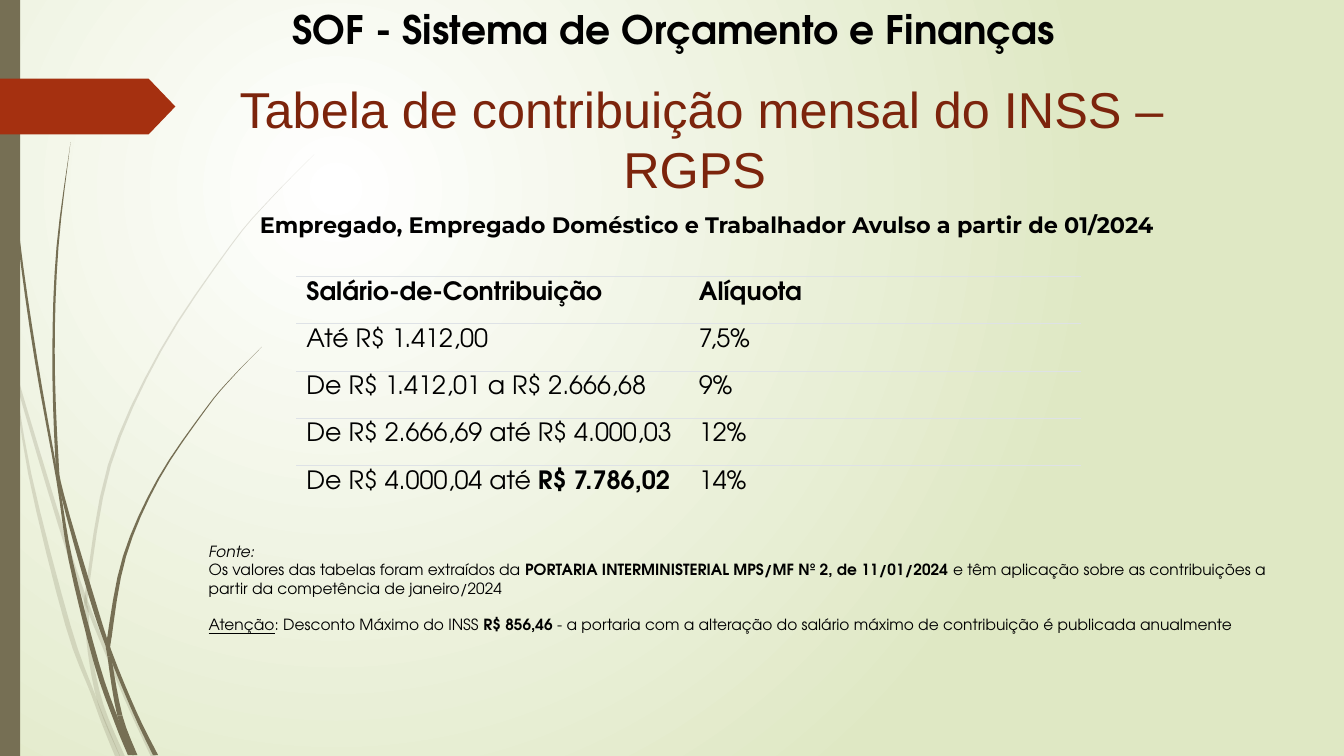
from lxml import etree
from pptx import Presentation
from pptx.dml.color import RGBColor
from pptx.enum.shapes import MSO_SHAPE
from pptx.enum.text import MSO_ANCHOR, MSO_AUTO_SIZE, PP_ALIGN
from pptx.oxml.ns import qn
from pptx.util import Cm, Pt

RECTANGLE, PENTAGON = MSO_SHAPE.RECTANGLE, MSO_SHAPE.PENTAGON
TOP, MIDDLE = MSO_ANCHOR.TOP, MSO_ANCHOR.MIDDLE
LEFT, CENTER = PP_ALIGN.LEFT, PP_ALIGN.CENTER
NO_AUTOFIT = MSO_AUTO_SIZE.NONE

BODY_FONT = "TeX Gyre Adventor"
BLACK, OLIVE, RUST, BROWN = "000000", "766F54", "A53010", "7C240C"
WHITE, PALE_GREEN, GRID_GREY = "FFFFFF", "DFE8C4", "DEE2E6"
NO_STYLE = "{2D5ABB26-0587-4C30-8999-92F81FD0307C}"
CURVE_STEPS = 4

# Each stalk: centre line of (x, y, thickness) in centimetres, and the joints
# (point numbers) at which one piece of grass ends and the next begins
LIGHT_STALKS = [
    ([(0, 7.39, 0.1), (0.25, 8.74, 0.06), (0.39, 9.45, 0.08), (1.52, 13.23, 0.11),
      (2.18, 15.19, 0.1), (3.18, 17.6, 0.1), (3.86, 19.05, 0.13)], (1, 4)),
    ([(0.28, 8.89, 0), (0.75, 11.94, 0.08), (1.71, 15.75, 0.13), (2.34, 17.48, 0.1),
      (2.65, 18.3, 0.12), (2.96, 19.05, 0.13)], (4,)),
    ([(7.92, 3.89, 0), (6.81, 5.02, 0.02), (5.8, 6.21, 0.03), (4.04, 8.85, 0.05),
      (2.76, 11.72, 0.08), (2.2, 14.83, 0.08), (2.19, 15.4, 0.09), (2.26, 16.41, 0.1),
      (2.54, 17.75, 0.13), (3.08, 19.05, 0.13)], (5, 6, 8)),
]
DARK_STALKS = [
    ([(0.09, 0, 0.03), (0.18, 2.79, 0.03), (0.46, 5.92, 0.05), (0.9, 9.02, 0.07),
      (1.45, 12.1, 0.06), (1.78, 14.12, 0.1), (2.43, 16.71, 0.13),
      (2.95, 18.2, 0.13), (3.3, 19.03, 0.15)], (4, 7)),
    ([(1.78, 3.58, 0), (1.45, 6.22, 0.05), (1.35, 8.86, 0.06), (1.43, 11.46, 0.08),
      (1.57, 12.45, 0.08), (2.3, 15.01, 0.13), (2.77, 16.43, 0.1),
      (3.4, 17.96, 0.1), (3.92, 19.03, 0.13)], (3, 4, 6)),
    ([(6.6, 8.74, 0), (5.87, 9.49, 0.02), (5.19, 10.3, 0.03), (3.99, 12.07, 0.05),
      (3.14, 14.01, 0.08), (2.76, 16.05, 0.11), (2.76, 16.55, 0.1),
      (3.02, 18.03, 0.13), (3.4, 19.03, 0.13)], (5, 6, 7)),
]

TABLE_ROWS = [
    [[("Salário-de-Contribuição", "b")], [("Alíquota", "b")]],
    [[("Até R$ 1.412,00", "")], [("7,5%", "")]],
    [[("De R$ 1.412,01 a R$ 2.666,68", "")], [("9%", "")]],
    [[("De R$ 2.666,69 até R$ 4.000,03", "")], [("12%", "")]],
    [[("De R$ 4.000,04 até ", ""), ("R$ 7.786,02", "b")], [("14%", "")]],
]
SOURCE_NOTE = [
    [("Fonte:", "i")],
    [("Os valores das tabelas foram extraídos da ", ""),
     ("PORTARIA INTERMINISTERIAL MPS/MF Nº 2, de 11/01/2024 ", "b"),
     ("e têm aplicação sobre as contribuições a partir da competência de janeiro/2024", "")],
    [("Atenção", "u"), (": Desconto Máximo do INSS ", ""), ("R$ 856,46 ", "b"),
     ("- a portaria com a alteração do salário máximo de contribuição é publicada anualmente", "")],
]


def color(hex_value):
    return RGBColor.from_string(hex_value)


def paint(shape, fill, opacity=100):
    shape.shadow.inherit = False
    shape.fill.solid()
    shape.fill.fore_color.rgb = color(fill)
    shape.line.fill.background()
    if opacity < 100:
        solid = shape.element.spPr.find(qn("a:solidFill"))
        etree.SubElement(solid[0], qn("a:alpha"), val=str(opacity * 1000))


def set_background(slide):
    fill = slide.background.fill
    fill.gradient()
    for stop, position, tone in zip(fill.gradient_stops, (0, 1), (WHITE, PALE_GREEN)):
        stop.position = position
        stop.color.rgb = color(tone)
    gradient = slide.element.find(".//" + qn("a:gradFill"))
    for linear in gradient.findall(qn("a:lin")):
        gradient.remove(linear)
    circle = etree.SubElement(gradient, qn("a:path"), {"path": "circle"})
    etree.SubElement(circle, qn("a:fillToRect"), l="50000", t="50000", r="100000", b="100000")


def smooth_line(points):
    """Interpolate the points with a Catmull-Rom curve."""
    padded = [points[0], *points, points[-1]]
    curve = []
    for before, start, end, after in zip(padded, padded[1:], padded[2:], padded[3:]):
        for step in range(CURVE_STEPS):
            t = step / CURVE_STEPS
            curve.append(tuple(
                b + t * (c - a) / 2 + t * t * (2 * a - 5 * b + 4 * c - d) / 2
                + t ** 3 * (3 * b - a - 3 * c + d) / 2
                for a, b, c, d in zip(before, start, end, after)))
    return curve + [points[-1]]


def add_stalk(slide, points, joints, opacity):
    curve = smooth_line(points)
    ends = [0, *joints, len(points) - 1]
    for first, last in zip(ends, ends[1:]):
        piece = curve[first * CURVE_STEPS:last * CURVE_STEPS + 1]
        right = [(Cm(x + width / 2), Cm(y)) for x, y, width in piece]
        left = [(Cm(x - width / 2), Cm(y)) for x, y, width in reversed(piece)]
        builder = slide.shapes.build_freeform(*right[0])
        builder.add_line_segments(right[1:] + left, close=True)
        paint(builder.convert_to_shape(), OLIVE, opacity)


def add_block(slide, kind, left, top, width, height, fill):
    shape = slide.shapes.add_shape(kind, Cm(left), Cm(top), Cm(width), Cm(height))
    paint(shape, fill)
    return shape


def write_runs(paragraph, runs, size, font=BODY_FONT, tone=BLACK, align=LEFT):
    paragraph.alignment = align
    for text, style in runs:
        run = paragraph.add_run()
        run.text = text
        run.font.name, run.font.size = font, Pt(size)
        run.font.color.rgb = color(tone)
        run.font.bold = "b" in style
        run.font.italic = "i" in style
        run.font.underline = "u" in style


def add_text(slide, box, paragraphs, size, font=BODY_FONT, align=LEFT, anchor=TOP):
    frame = slide.shapes.add_textbox(*map(Cm, box)).text_frame
    frame.word_wrap = True
    frame.vertical_anchor = anchor
    for index, runs in enumerate(paragraphs):
        paragraph = frame.add_paragraph() if index else frame.paragraphs[0]
        write_runs(paragraph, runs, size, font, align=align)
    return frame


def set_title(slide, text):
    title = slide.shapes.title
    title.left, title.top, title.width, title.height = Cm(4.06), Cm(1.83), Cm(27.25), Cm(2.69)
    frame = title.text_frame
    frame.auto_size = NO_AUTOFIT
    frame.word_wrap = True
    frame.vertical_anchor = TOP
    frame.margin_top = Cm(0.13)
    paragraph = frame.paragraphs[0]
    paragraph.line_spacing = 1.0
    paragraph.space_before = Pt(0)
    write_runs(paragraph, [(text, "")], 36, "Arial", BROWN, CENTER)


def add_top_border(cell):
    line = etree.Element(qn("a:lnT"), w=str(Pt(0.75)))
    solid = etree.SubElement(line, qn("a:solidFill"))
    etree.SubElement(solid, qn("a:srgbClr"), val=GRID_GREY)
    cell._tc.get_or_add_tcPr().insert(0, line)


def add_rate_table(slide):
    frame = slide.shapes.add_table(len(TABLE_ROWS), 2, Cm(7.47), Cm(6.97), Cm(19.78), Cm(5.95))
    table = frame.table
    table.first_row = table.horz_banding = False
    table._tbl.tblPr.find(qn("a:tableStyleId")).text = NO_STYLE
    for row, contents in zip(table.rows, TABLE_ROWS):
        row.height = Cm(1.19)
        for cell, runs in zip(row.cells, contents):
            cell.fill.background()
            add_top_border(cell)
            write_runs(cell.text_frame.paragraphs[0], runs, 18)


def main():
    presentation = Presentation()
    presentation.slide_width, presentation.slide_height = Cm(33.87), Cm(19.05)
    slide = presentation.slides.add_slide(presentation.slide_layouts[5])

    # Background and side decoration
    set_background(slide)
    for stalks, opacity in ((LIGHT_STALKS, 20), (DARK_STALKS, 100)):
        for points, joints in stalks:
            add_stalk(slide, points, joints, opacity)
    add_block(slide, RECTANGLE, 0, 0, 0.51, 19.05, OLIVE)
    marker = add_block(slide, PENTAGON, 0, 1.98, 4.42, 1.41, RUST)
    marker.adjustments[0] = 0.48

    # Headings
    add_text(slide, (6.98, 0, 19.99, 1.45),
             [[("SOF - Sistema de Orçamento e Finanças", "b")]], 28, align=CENTER)
    set_title(slide, "Tabela de contribuição mensal do INSS – RGPS ")
    add_text(slide, (6.3, 4.48, 24.05, 2.36),
             [[("Empregado, Empregado Doméstico e Trabalhador Avulso a partir de 01/2024", "b")]],
             16, "Montserrat", anchor=MIDDLE)

    # Rates and source note
    add_rate_table(slide)
    note = add_text(slide, (5.01, 13.53, 27.41, 2.62), SOURCE_NOTE, 11)
    note.paragraphs[-1].space_before = Pt(13)

    presentation.save("out.pptx")


if __name__ == "__main__":
    main()
